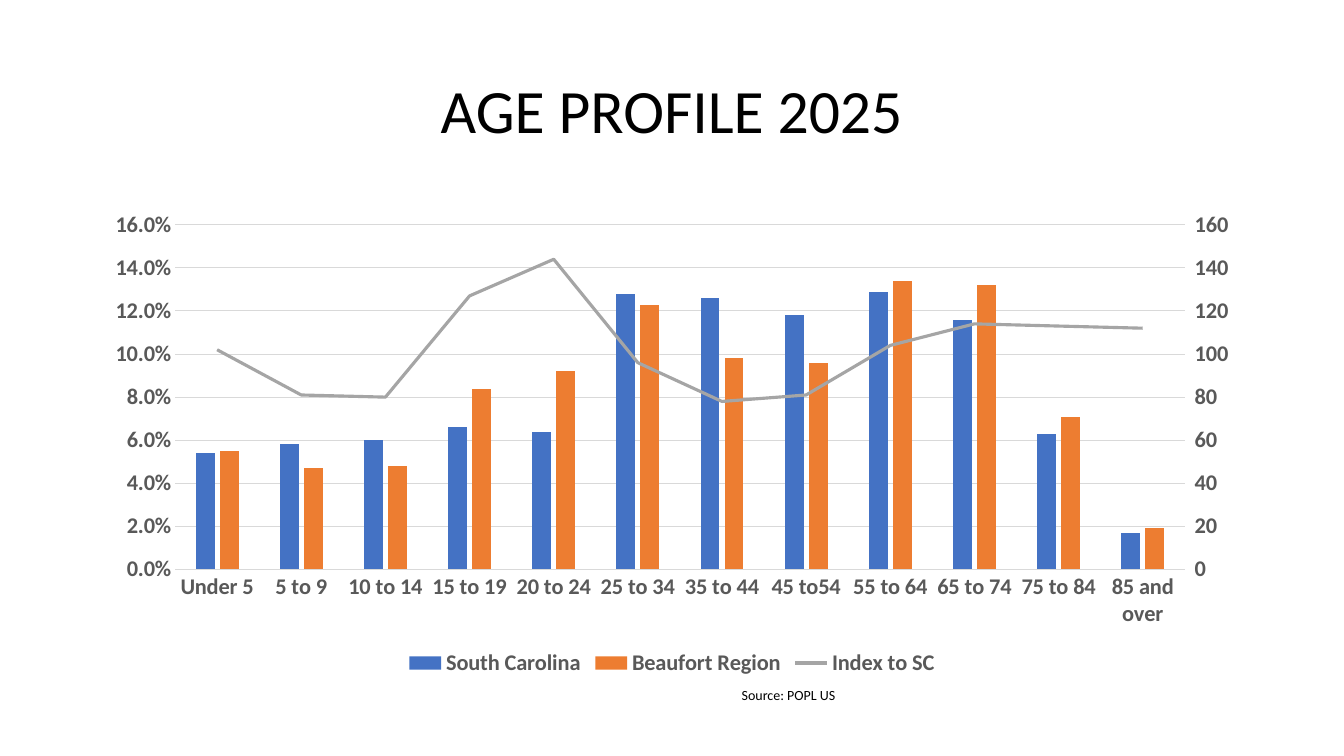
from pptx import Presentation
from pptx.chart.data import CategoryChartData
from pptx.dml.color import RGBColor
from pptx.enum.chart import XL_CHART_TYPE as ChartType, XL_LEGEND_POSITION as LegendPosition
from pptx.enum.chart import XL_TICK_MARK as TickMark
from pptx.enum.text import MSO_ANCHOR as Anchor, PP_ALIGN as Align
from pptx.oxml import parse_xml
from pptx.oxml.ns import nsdecls, qn
from pptx.util import Pt

FONT = "Calibri"
BLACK, GRAY, GRID = "000000", "595959", "D9D9D9"
AGES = ["Under 5", "5 to 9", "10 to 14", "15 to 19", "20 to 24", "25 to 34",
        "35 to 44", "45 to54", "55 to 64", "65 to 74", "75 to 84", "85 and over"]
SHARES = {
    "South Carolina": ("4472C4", [0.054, 0.058, 0.06, 0.066, 0.064, 0.128,
                                  0.126, 0.118, 0.129, 0.116, 0.063, 0.017]),
    "Beaufort Region": ("ED7D31", [0.055, 0.047, 0.048, 0.084, 0.092, 0.123,
                                   0.098, 0.096, 0.134, 0.132, 0.071, 0.019]),
}
INDEX_COLOR = "A5A5A5"
INDEX = [102, 81, 80, 127, 144, 96, 78, 81, 104, 114, 113, 112]


def color(code):
    return RGBColor.from_string(code)


def set_font(font, size, code, bold=False):
    font.name = FONT
    font.size = Pt(size)
    font.bold = bold
    font.color.rgb = color(code)


def set_line(line, code, width):
    line.color.rgb = color(code)
    line.width = Pt(width)


def add_text(page, text, left, top, width, height, size, align=Align.LEFT,
             anchor=Anchor.TOP, spacing=1.0):
    box = page.shapes.add_textbox(Pt(left), Pt(top), Pt(width), Pt(height))
    frame = box.text_frame
    frame.word_wrap = True
    frame.vertical_anchor = anchor
    frame.text = text
    para = frame.paragraphs[0]
    para.alignment = align
    para.line_spacing = spacing
    set_font(para.runs[0].font, size, BLACK)


def style_axis(axis):
    axis.major_tick_mark = TickMark.NONE
    axis.minor_tick_mark = TickMark.NONE
    set_font(axis.tick_labels.font, 16, GRAY, True)


def move_to_right_axis(chart, series):
    plot_area = chart.plots[0]._element.getparent()
    ser = series._element
    for flag in ser.findall(qn("c:invertIfNegative")):
        ser.remove(flag)
    ser.find(qn("c:spPr")).addnext(
        parse_xml(f'<c:marker {nsdecls("c")}><c:symbol val="none"/></c:marker>'))
    for smooth in ser.findall(qn("c:smooth")):
        ser.remove(smooth)
    ser.append(parse_xml(f'<c:smooth {nsdecls("c")} val="0"/>'))
    line_chart = parse_xml(
        f'<c:lineChart {nsdecls("c")}><c:grouping val="standard"/><c:varyColors val="0"/>'
        '<c:marker val="1"/><c:axId val="5001"/><c:axId val="5002"/></c:lineChart>')
    line_chart.find(qn("c:varyColors")).addnext(ser)
    plot_area.find(qn("c:barChart")).addnext(line_chart)
    right_axis = parse_xml(
        f'<c:valAx {nsdecls("c", "a")}><c:axId val="5002"/>'
        '<c:scaling><c:orientation val="minMax"/><c:max val="160"/><c:min val="0"/></c:scaling>'
        '<c:delete val="0"/><c:axPos val="r"/><c:numFmt formatCode="General" sourceLinked="0"/>'
        '<c:majorTickMark val="out"/><c:minorTickMark val="none"/><c:tickLblPos val="nextTo"/>'
        '<c:spPr><a:ln><a:noFill/></a:ln></c:spPr>'
        '<c:crossAx val="5001"/><c:crosses val="max"/><c:majorUnit val="20"/></c:valAx>')
    hidden_axis = parse_xml(
        f'<c:catAx {nsdecls("c")}><c:axId val="5001"/>'
        '<c:scaling><c:orientation val="minMax"/></c:scaling>'
        '<c:delete val="1"/><c:axPos val="b"/><c:majorTickMark val="none"/>'
        '<c:minorTickMark val="none"/><c:tickLblPos val="nextTo"/>'
        '<c:crossAx val="5002"/><c:crosses val="autoZero"/></c:catAx>')
    plot_area.find(qn("c:valAx")).addnext(right_axis)
    right_axis.addnext(hidden_axis)
    set_font(type(chart.value_axis)(right_axis).tick_labels.font, 16, GRAY, True)


def add_age_chart(page, left, top, width, height):
    data = CategoryChartData()
    data.categories = AGES
    for name, (_, values) in SHARES.items():
        data.add_series(name, values, "0.0%")
    data.add_series("Index to SC", INDEX, "0")
    chart = page.shapes.add_chart(ChartType.COLUMN_CLUSTERED, Pt(left), Pt(top),
                                  Pt(width), Pt(height), data).chart
    set_font(chart.font, 10, BLACK)
    chart.has_title = False
    chart.has_legend = True
    chart.legend.position = LegendPosition.BOTTOM
    chart.legend.include_in_layout = False
    set_font(chart.legend.font, 16, GRAY, True)

    ages, shares = chart.category_axis, chart.value_axis
    style_axis(ages)
    style_axis(shares)
    set_line(ages.format.line, GRID, 0.75)
    shares.format.line.fill.background()
    set_line(shares.major_gridlines.format.line, GRID, 0.75)
    shares.minimum_scale, shares.maximum_scale, shares.major_unit = 0, 0.16, 0.02
    shares.tick_labels.number_format = "0.0%"
    shares.tick_labels.number_format_is_linked = False

    plot = chart.plots[0]
    plot.gap_width, plot.overlap, plot.vary_by_categories = 219, -27, False
    *columns, index = plot.series
    for series, (code, _) in zip(columns, SHARES.values()):
        series.invert_if_negative = False
        series.format.fill.solid()
        series.format.fill.fore_color.rgb = color(code)
    set_line(index.format.line, INDEX_COLOR, 2.25)
    move_to_right_axis(chart, index)


def main():
    deck = Presentation()
    deck.slide_width, deck.slide_height = Pt(960), Pt(540)
    page = deck.slides.add_slide(deck.slide_layouts[6])
    add_text(page, "AGE PROFILE 2025", 66, 28.75, 828, 104.4, 44,
             Align.CENTER, Anchor.MIDDLE, 0.9)
    add_age_chart(page, 66, 144, 828, 342.6)
    add_text(page, "Source: POPL US", 522.7, 486.6, 255.6, 19.4, 10)
    deck.save("out.pptx")


if __name__ == "__main__":
    main()
